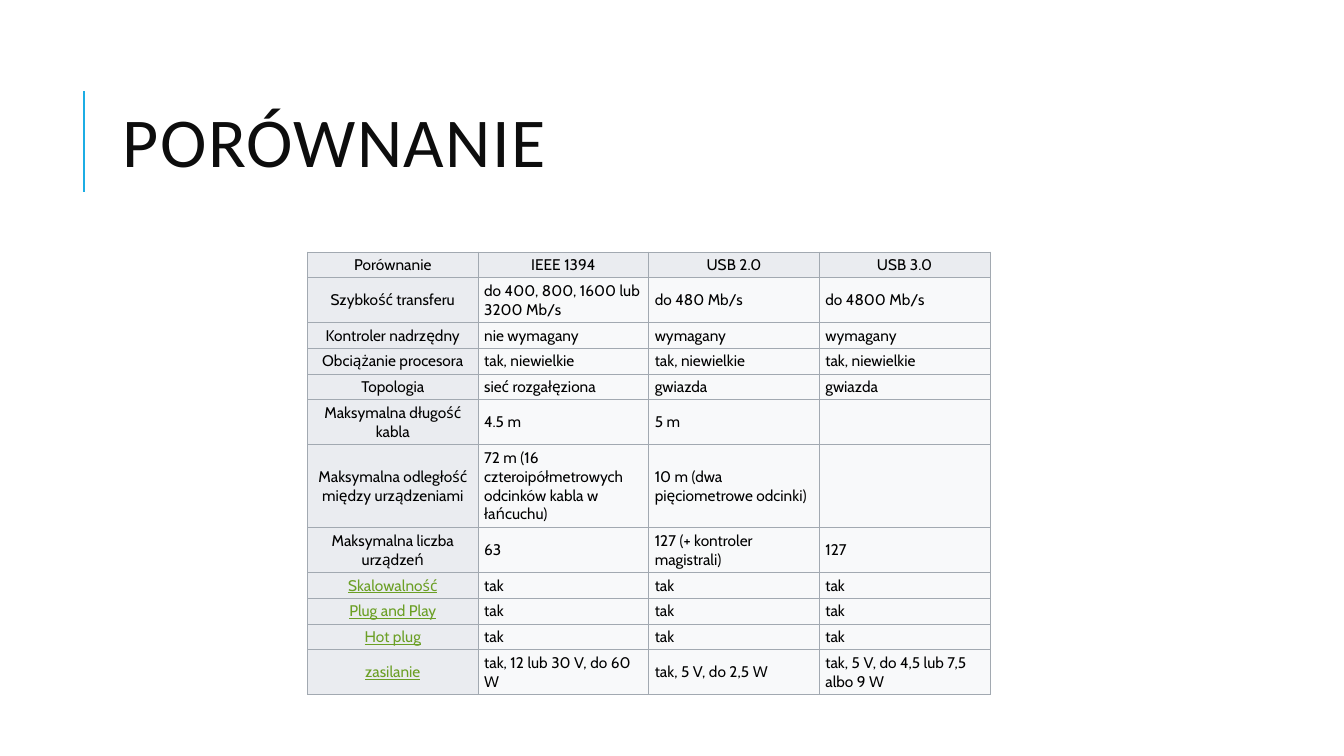
from lxml import etree
from pptx import Presentation
from pptx.dml.color import RGBColor
from pptx.enum.shapes import MSO_CONNECTOR
from pptx.enum.text import MSO_ANCHOR, PP_ALIGN
from pptx.oxml.ns import qn
from pptx.util import Inches, Pt

MIDDLE = MSO_ANCHOR.MIDDLE
CENTER, LEFT = PP_ALIGN.CENTER, PP_ALIGN.LEFT
STRAIGHT = MSO_CONNECTOR.STRAIGHT

COLORS = {
    "accent": "1CADE4",
    "title": "0D0D0D",
    "text": "000000",
    "term": "6B9F25",
    "header": "EAECF0",
    "body": "F8F9FA",
    "border": "A2A9B1",
}


def color(name):
    return RGBColor.from_string(COLORS[name])


def add_borders(cell, width):
    properties = cell._tc.get_or_add_tcPr()
    for side in ("lnL", "lnR", "lnT", "lnB"):
        line = etree.SubElement(properties, qn(f"a:{side}"), w=str(width))
        fill = etree.SubElement(line, qn("a:solidFill"))
        etree.SubElement(fill, qn("a:srgbClr"), val=COLORS["border"])


presentation = Presentation()
presentation.slide_width = Inches(13.33)
presentation.slide_height = Inches(7.5)
slide = presentation.slides.add_slide(presentation.slide_layouts[6])

# Accent line beside the title
accent = slide.shapes.add_connector(
    STRAIGHT, Inches(0.83), Inches(1.9), Inches(0.83), Inches(0.9))
accent.line.color.rgb = color("accent")
accent.line.width = Pt(1.5)
etree.SubElement(accent._element.spPr, qn("a:effectLst"))

# Title
title = slide.shapes.add_textbox(
    Inches(1.12), Inches(0.64), Inches(10.63), Inches(1.64))
title.text_frame.word_wrap = True
title.text_frame.vertical_anchor = MIDDLE
paragraph = title.text_frame.paragraphs[0]
paragraph.text = "PORÓWNANIE"
paragraph.line_spacing = 0.8
paragraph.font.name = "Calibri"
paragraph.font.size = Pt(50)
paragraph.font.color.rgb = color("title")
paragraph.runs[0]._r.get_or_add_rPr().set("spc", "100")

# Comparison: number of text lines in the row, then its cells
ROWS = [
    (1, "Porównanie", "IEEE 1394", "USB 2.0", "USB 3.0"),
    (2, "Szybkość transferu", "do 400, 800, 1600 lub 3200 Mb/s",
     "do 480 Mb/s", "do 4800 Mb/s"),
    (1, "Kontroler nadrzędny", "nie wymagany", "wymagany", "wymagany"),
    (1, "Obciążanie procesora", "tak, niewielkie", "tak, niewielkie",
     "tak, niewielkie"),
    (1, "Topologia", "sieć rozgałęziona", "gwiazda", "gwiazda"),
    (2, "Maksymalna długość kabla", "4.5 m", "5 m", ""),
    (4, "Maksymalna odległość między urządzeniami",
     "72 m (16 czteroipółmetrowych odcinków kabla w łańcuchu)",
     "10 m (dwa pięciometrowe odcinki)", ""),
    (2, "Maksymalna liczba urządzeń", "63", "127 (+ kontroler magistrali)",
     "127"),
    (1, "Skalowalność", "tak", "tak", "tak"),
    (1, "Plug and Play", "tak", "tak", "tak"),
    (1, "Hot plug", "tak", "tak", "tak"),
    (2, "zasilanie", "tak, 12 lub 30 V, do 60 W", "tak, 5 V, do 2,5 W",
     "tak, 5 V, do 4,5 lub 7,5 albo 9 W"),
]
TERMS = {"Skalowalność", "Plug and Play", "Hot plug", "zasilanie"}
LINE_HEIGHT, ROW_PADDING = Inches(0.19), Pt(4.7)

table = slide.shapes.add_table(
    len(ROWS), 4, Inches(3.05), Inches(2.5), Inches(6.77), Inches(4.4)).table
table.first_row = False
table.horz_banding = False

for row_index, (line_count, *texts) in enumerate(ROWS):
    table.rows[row_index].height = line_count * LINE_HEIGHT + ROW_PADDING
    for column_index, text in enumerate(texts):
        cell = table.cell(row_index, column_index)
        is_header = row_index == 0 or column_index == 0
        add_borders(cell, Pt(0.6))
        cell.fill.solid()
        cell.fill.fore_color.rgb = color("header" if is_header else "body")
        cell.vertical_anchor = MIDDLE
        cell.margin_left = cell.margin_right = Inches(0.06)
        cell.margin_top = cell.margin_bottom = Inches(0.03)
        paragraph = cell.text_frame.paragraphs[0]
        paragraph.text = text
        paragraph.alignment = CENTER if is_header else LEFT
        paragraph.font.name = "Cabin"
        paragraph.font.size = Pt(11)
        paragraph.font.underline = text in TERMS
        paragraph.font.color.rgb = color("term" if text in TERMS else "text")

presentation.save("out.pptx")
